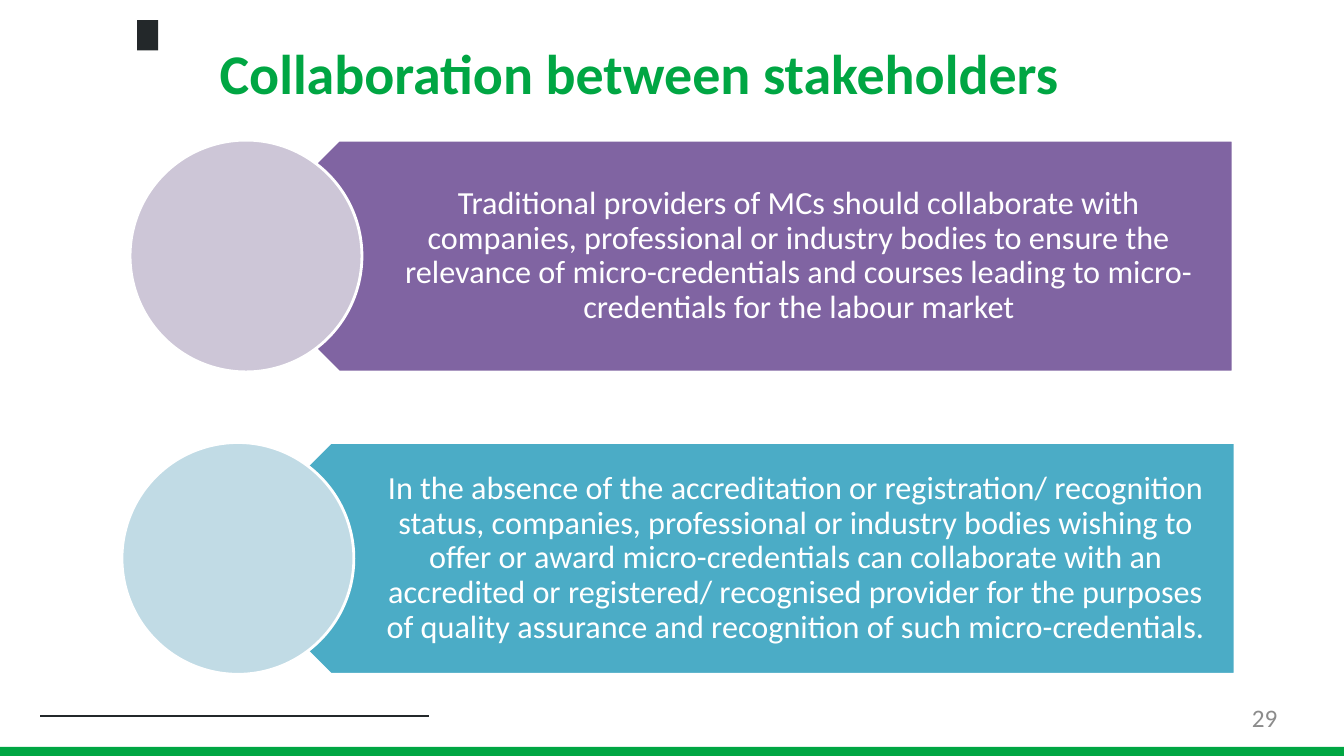
from dataclasses import dataclass

from pptx import Presentation
from pptx import util as u
from pptx.dml.color import RGBColor
from pptx.enum import shapes, text
from pptx.oxml.ns import qn
from lxml import etree

WIDTH, HEIGHT = 13.33, 7.5


@dataclass(frozen=True)
class Theme:
    font: str = "Calibri"
    green: str = "00A643"
    ink: str = "23282A"
    white: str = "FFFFFF"
    grey: str = "8C8C8C"
    purple: str = "8064A2"
    lilac: str = "CDC6D7"
    teal: str = "4BACC6"
    pale_blue: str = "C1DBE5"
    title_size: int = 40
    body_size: int = 23
    number_size: int = 18


THEME = Theme()
PANELS = [
    ((1.29, 1.39, 10.94, 2.3), THEME.purple, THEME.lilac,
     "Traditional providers of MCs should collaborate with companies, professional or "
     "industry bodies to ensure the relevance of micro-credentials and courses leading "
     "to micro-credentials for the labour market"),
    ((1.21, 4.39, 11.04, 2.3), THEME.teal, THEME.pale_blue,
     "In the absence of the accreditation or registration/ recognition status, companies, "
     "professional or industry bodies wishing to offer or award micro-credentials can "
     "collaborate with an accredited or registered/ recognised provider for the purposes "
     "of quality assurance and recognition of such micro-credentials."),
]


def inches(box):
    return [u.Inches(length) for length in box]


def add_text(slide, box, words, size, color, bold=False, align=text.PP_ALIGN.LEFT,
             anchor=text.MSO_ANCHOR.TOP, insets=(0.1, 0.05, 0.1, 0.05), line_spacing=1.0):
    frame = slide.shapes.add_textbox(*inches(box)).text_frame
    frame.word_wrap = True
    frame.vertical_anchor = anchor
    (frame.margin_left, frame.margin_top,
     frame.margin_right, frame.margin_bottom) = inches(insets)
    paragraph = frame.paragraphs[0]
    paragraph.alignment = align
    paragraph.line_spacing = line_spacing
    run = paragraph.add_run()
    run.text = words
    run.font.name = THEME.font
    run.font.size = u.Pt(size)
    run.font.bold = bold
    run.font.color.rgb = RGBColor.from_string(color)


def add_block(slide, kind, box, fill, outline=None):
    shape = slide.shapes.add_shape(kind, *inches(box))
    shape.shadow.inherit = False
    shape.fill.solid()
    shape.fill.fore_color.rgb = RGBColor.from_string(fill)
    if outline:
        shape.line.color.rgb = RGBColor.from_string(outline)
        shape.line.width = u.Pt(2)
    else:
        shape.line.fill.background()
    return shape


def add_frame(slide, box):
    left, top, width, height = box
    bar = 0.09
    add_block(slide, shapes.MSO_SHAPE.RECTANGLE,
              (left, top + height - bar, width, bar), THEME.green)
    add_block(slide, shapes.MSO_SHAPE.RECTANGLE,
              (left + 1.36, top + 0.2, 0.21, 0.3), THEME.ink)
    rule_top = top + height - 0.4
    rule = slide.shapes.add_connector(
        shapes.MSO_CONNECTOR.STRAIGHT,
        *inches((left + 0.4, rule_top, left + 4.25, rule_top)))
    rule.line.color.rgb = RGBColor.from_string(THEME.ink)
    rule.line.width = u.Pt(1.5)
    etree.SubElement(rule._element.spPr, qn("a:effectLst"))
    add_text(slide, (left + width - 3.73, top + height - 0.53, 3.07, 0.38), "29",
             THEME.number_size, THEME.grey, align=text.PP_ALIGN.RIGHT, insets=(0, 0, 0, 0))


def add_panel(slide, box, fill, circle_fill, words):
    left, top, width, height = box
    arrow_start = height * 0.4
    text_start = height * 0.65
    arrow = add_block(slide, shapes.MSO_SHAPE.PENTAGON,
                      (left + arrow_start, top, width - arrow_start, height),
                      fill, THEME.white)
    arrow.rotation = 180
    add_text(slide, (left + text_start, top, width - text_start, height), words,
             THEME.body_size, THEME.white, align=text.PP_ALIGN.CENTER,
             anchor=text.MSO_ANCHOR.MIDDLE, insets=(1.02, 0.1, 0.18, 0.1),
             line_spacing=0.9)
    add_block(slide, shapes.MSO_SHAPE.OVAL, (left, top, height, height),
              circle_fill, THEME.white)


def main():
    presentation = Presentation()
    presentation.slide_width, presentation.slide_height = inches((WIDTH, HEIGHT))
    slide = presentation.slides.add_slide(presentation.slide_layouts[6])
    add_frame(slide, (0, 0, WIDTH, HEIGHT))
    add_text(slide, (2.08, 0.33, 10.17, 0.77), "Collaboration between stakeholders",
             THEME.title_size, THEME.green, bold=True)
    for panel in PANELS:
        add_panel(slide, *panel)
    presentation.save("out.pptx")


if __name__ == "__main__":
    main()
